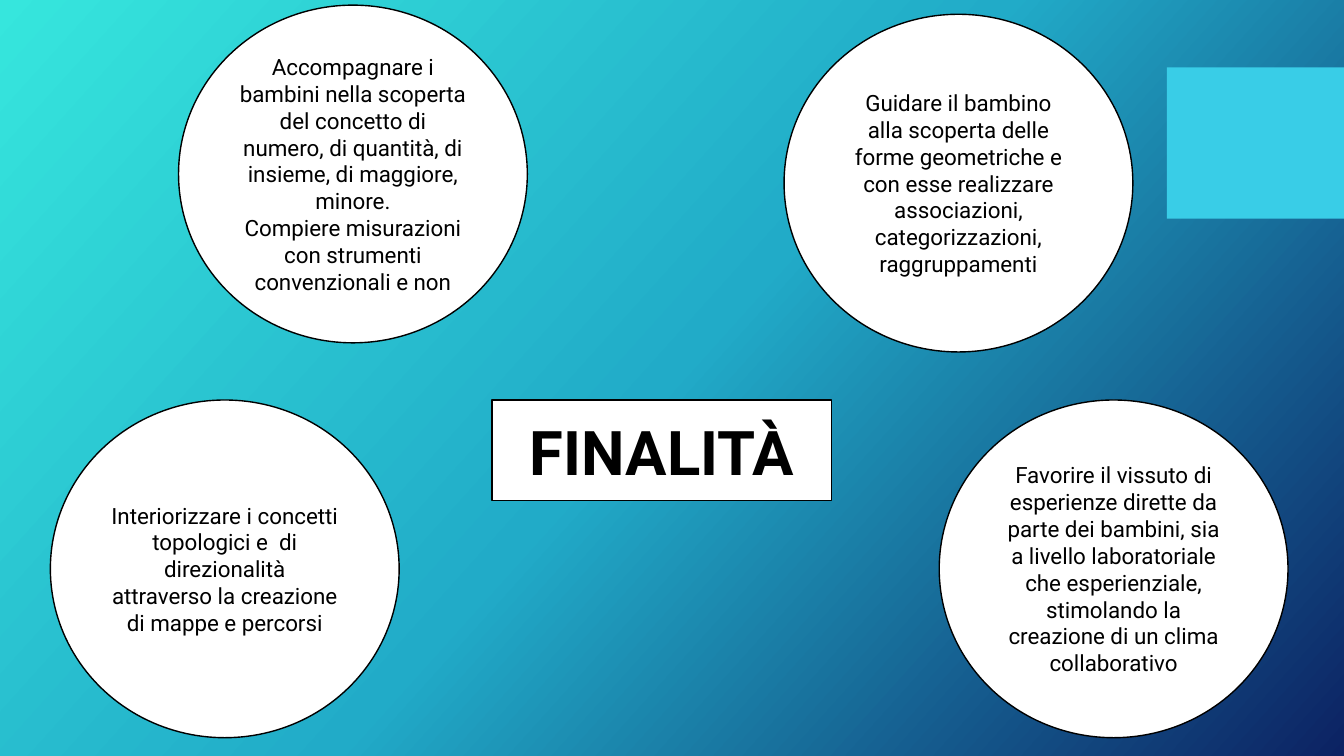
from copy import deepcopy
from dataclasses import dataclass

from pptx import Presentation
from pptx.dml.color import RGBColor
from pptx.enum import shapes, text
from pptx.oxml import ns
from pptx.util import Cm, Pt


@dataclass(frozen=True)
class Theme:
    font: str = "Roboto"
    body_size: float = 16
    title_size: float = 44
    line_width: float = 1
    ink: str = "000000"
    paper: str = "FFFFFF"
    accent: str = "39CDE7"
    gradient: tuple = ("36E6DD", "21ABC8", "0C2263")
    gradient_angle: float = 42


THEME = Theme()
CIRCLE_WIDTH, CIRCLE_HEIGHT = 8.79, 8.51
LOWER_ROW = 10.08

GOALS = [
    (4.5, 0.13, [
        "Accompagnare i bambini nella scoperta del concetto di numero, "
        "di quantità, di insieme, di maggiore, minore.",
        "Compiere misurazioni con strumenti convenzionali e non",
    ]),
    (19.76, 0.36, [
        "Guidare il bambino alla scoperta delle forme geometriche e con esse "
        "realizzare associazioni, categorizzazioni, raggruppamenti",
    ]),
    (23.67, LOWER_ROW, [
        "Favorire il vissuto di esperienze dirette da parte dei bambini, "
        "sia a livello laboratoriale che esperienziale, "
        "stimolando la creazione di un clima collaborativo",
    ]),
    (1.27, LOWER_ROW, [
        "Interiorizzare i concetti topologici e  di direzionalità "
        "attraverso la creazione di mappe e percorsi",
    ]),
]


def set_background(slide):
    """Fill the slide with evenly spaced theme gradient colours."""
    fill = slide.background.fill
    fill.gradient()
    # The public angle runs anticlockwise, the theme angle clockwise.
    fill.gradient_angle = 360 - THEME.gradient_angle
    stop_list = next(slide.element.iter(ns.qn("a:gsLst")))
    stop_list.insert(1, deepcopy(stop_list[0]))
    last = len(THEME.gradient) - 1
    for index, (stop, colour) in enumerate(zip(fill.gradient_stops, THEME.gradient)):
        stop.position = index / last
        stop.color.rgb = RGBColor.from_string(colour)


def add_panel(slide, kind, left, top, width, height, colour):
    shape = slide.shapes.add_shape(kind, Cm(left), Cm(top), Cm(width), Cm(height))
    shape.shadow.inherit = False
    shape.fill.solid()
    shape.fill.fore_color.rgb = RGBColor.from_string(colour)
    shape.line.fill.background()
    return shape


def add_outline(shape):
    shape.line.color.rgb = RGBColor.from_string(THEME.ink)
    shape.line.width = Pt(THEME.line_width)


def write_centred(shape, paragraphs, size, bold=False):
    frame = shape.text_frame
    frame.word_wrap = True
    frame.vertical_anchor = text.MSO_ANCHOR.MIDDLE
    for index, content in enumerate(paragraphs):
        paragraph = frame.add_paragraph() if index else frame.paragraphs[0]
        paragraph.alignment = text.PP_ALIGN.CENTER
        run = paragraph.add_run()
        run.text = content
        run.font.name = THEME.font
        run.font.size = Pt(size)
        run.font.bold = bold
        run.font.color.rgb = RGBColor.from_string(THEME.ink)


def add_goal(slide, left, top, paragraphs):
    circle = add_panel(slide, shapes.MSO_SHAPE.OVAL, left, top,
                       CIRCLE_WIDTH, CIRCLE_HEIGHT, THEME.paper)
    add_outline(circle)
    write_centred(circle, paragraphs, THEME.body_size)


def add_title(slide, title):
    box = add_panel(slide, shapes.MSO_SHAPE.RECTANGLE, 12.4, LOWER_ROW,
                    8.56, 2.54, THEME.paper)
    add_outline(box)
    write_centred(box, [title], THEME.title_size, bold=True)


def main():
    presentation = Presentation()
    presentation.slide_width = Cm(33.87)
    presentation.slide_height = Cm(19.05)
    slide = presentation.slides.add_slide(presentation.slide_layouts[6])
    set_background(slide)
    add_panel(slide, shapes.MSO_SHAPE.RECTANGLE, 29.41, 1.7, 4.46, 3.81, THEME.accent)
    for left, top, paragraphs in GOALS:
        add_goal(slide, left, top, paragraphs)
    add_title(slide, "FINALITÀ")
    presentation.save("out.pptx")


if __name__ == "__main__":
    main()
